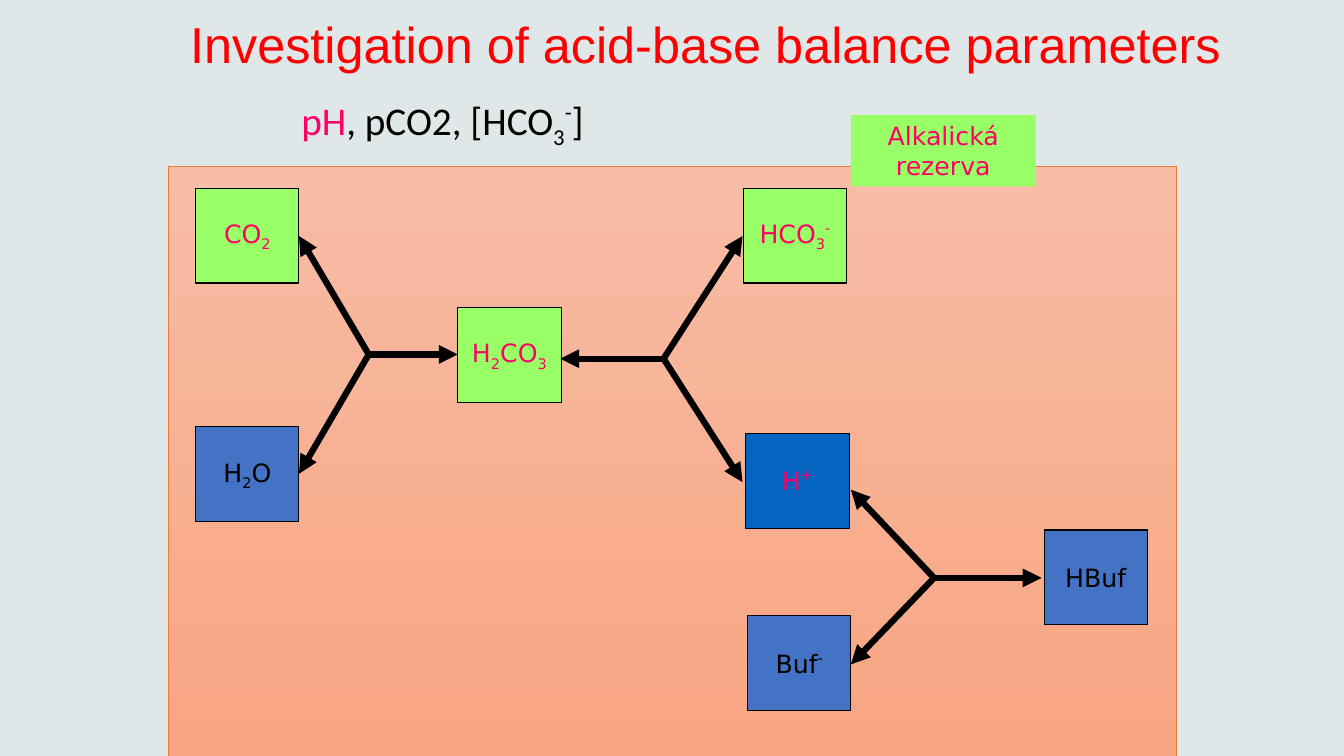
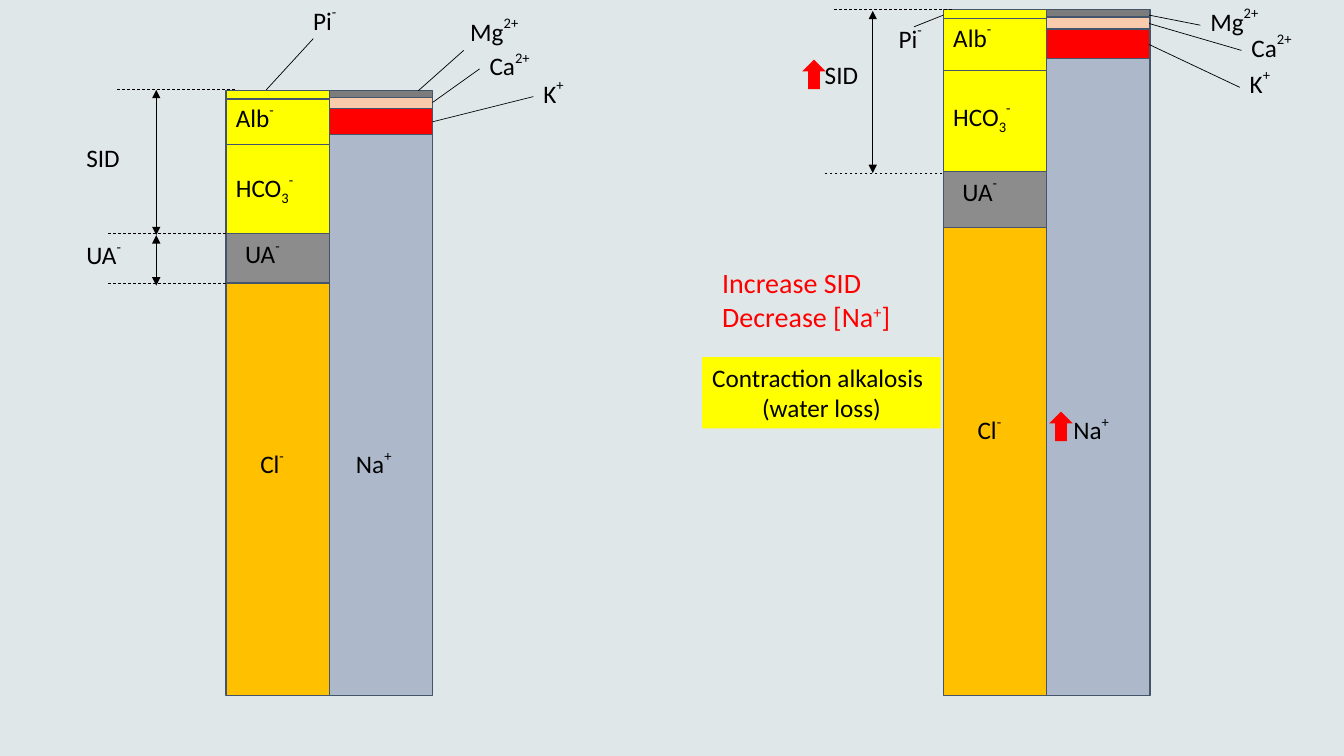
"""Build two slides on acid-base balance: buffer reactions and ion columns."""
from dataclasses import dataclass
from itertools import pairwise

from lxml.etree import SubElement
from pptx import Presentation
from pptx.dml.color import RGBColor
from pptx.enum.dml import MSO_LINE
from pptx.enum.shapes import MSO_CONNECTOR, MSO_SHAPE
from pptx.enum.text import MSO_ANCHOR, PP_ALIGN
from pptx.oxml.ns import qn
from pptx.util import Emu, Inches, Pt

COLUMNS, ROWS = 160, 90
CELL = Inches(7.5) / ROWS


@dataclass(frozen=True)
class Theme:
    backdrop: str = "E0E7E8"
    ink: str = "000000"
    pink: str = "FF0066"
    red: str = "FF0000"
    green: str = "99FF66"
    blue: str = "4472C4"
    deep_blue: str = "0563C1"
    yellow: str = "FFFF00"
    amber: str = "FFC000"
    grey: str = "8C8C8C"
    dark_grey: str = "7C7C7C"
    peach: str = "F8CBAD"
    slate: str = "ADB9CA"
    outline: str = "44546A"
    panel_top: str = "F7BDA5"
    panel_bottom: str = "F8A582"
    panel_edge: str = "ED7D31"
    title_font: str = "Arial"
    body_font: str = "Calibri"
    diagram_font: str = "DejaVu Sans"
    title_size: int = 36
    body_size: int = 28
    note_size: int = 20
    label_size: int = 18


THEME = Theme()
NODE_SIZE = (12.3, 11.3)
BAR_WIDTH = 12.3
COLUMN_HEIGHT = 72
LABELS = {
    "Pi": ("Pi|^-", 6.7), "Alb": ("Alb|^-", 9.4), "HCO3": ("HCO|_3|^-", 13.2),
    "UA": ("UA|^-", 9.1), "Cl": ("Cl|^-", 7.1), "Na": ("Na|^+", 8.6),
    "Mg": ("Mg|^2+", 10.9), "Ca": ("Ca|^2+", 9.7), "K": ("K|^+", 6.8),
    "SID": ("SID", 9),
}
CATIONS = (
    (0, THEME.dark_grey, None), (0.8, THEME.peach, None),
    (2.1, THEME.red, None), (5.2, THEME.slate, ("Na", 2, 36.6)),
)
ANIONS = (
    (0, THEME.yellow, None), (1, THEME.yellow, ("Alb", 0, -0.4)),
    (6.4, THEME.yellow, ("HCO3", 0, 2.5)), (17, THEME.grey, ("UA", 1.1, -0.2)),
    (22.9, THEME.amber, ("Cl", 2.9, 18.9)),
)


def grid(*lengths):
    return [Emu(round(length * CELL)) for length in lengths]


def rgb(code):
    return RGBColor.from_string(code)


class Painter:
    def __init__(self, theme):
        self.theme = theme
        self.deck = Presentation()
        self.deck.slide_width, self.deck.slide_height = grid(COLUMNS, ROWS)
        self.page = None

    def new_page(self):
        self.page = self.deck.slides.add_slide(self.deck.slide_layouts[6])
        self.page.background.fill.solid()
        self.page.background.fill.fore_color.rgb = rgb(self.theme.backdrop)

    def shape(self, place, fill, edge=None, weight=0.75, kind=MSO_SHAPE.RECTANGLE):
        box = self.page.shapes.add_shape(kind, *grid(*place))
        box.shadow.inherit = False
        box.fill.solid()
        box.fill.fore_color.rgb = rgb(fill)
        if edge:
            box.line.color.rgb = rgb(edge)
            box.line.width = Pt(weight)
        else:
            box.line.fill.background()
        return box

    def panel(self, place):
        box = self.shape(place, self.theme.panel_top, self.theme.panel_edge, 0.5)
        box.fill.gradient()
        box.fill.gradient_angle = 270
        ends = (self.theme.panel_top, self.theme.panel_bottom)
        for stop, color in zip(box.fill.gradient_stops, ends):
            stop.color.rgb = rgb(color)

    def put_text(self, box, lines, color=None, font=None, size=None, raised=50,
                 aligns=(PP_ALIGN.LEFT,), anchor=MSO_ANCHOR.TOP, spacing=None):
        frame = box.text_frame
        frame.word_wrap = True
        frame.vertical_anchor = anchor
        for index, line in enumerate(lines):
            para = frame.add_paragraph() if index else frame.paragraphs[0]
            para.alignment = aligns[index % len(aligns)]
            para.line_spacing = spacing
            para.font.name = font or self.theme.body_font
            para.font.size = Pt(size or self.theme.label_size)
            para.font.color.rgb = rgb(color or self.theme.ink)
            for part in line.split("|"):
                self.span(para, part, raised)

    def span(self, para, part, raised):
        span = para.add_run()
        span.text = part.lstrip("_^*")
        shift = {"_": -25, "^": raised}.get(part[0])
        if shift:
            span._r.get_or_add_rPr().set("baseline", str(shift * 1000))
        if part[0] == "*":
            span.font.color.rgb = rgb(self.theme.pink)

    def text(self, place, lines, **style):
        box = self.page.shapes.add_textbox(*grid(*place))
        self.put_text(box, lines, **style)

    def label(self, name, left, top):
        words, width = LABELS[name]
        self.text((left, top, width, 6), [words])

    def node(self, left, top, words, fill, color):
        box = self.shape((left, top, *NODE_SIZE), fill, self.theme.ink)
        self.put_text(box, [words], color, self.theme.diagram_font, raised=40,
                      aligns=(PP_ALIGN.CENTER,), anchor=MSO_ANCHOR.MIDDLE)

    def line(self, start, end, weight=0.5, ends=(), dashed=False):
        link = self.page.shapes.add_connector(
            MSO_CONNECTOR.STRAIGHT, *grid(*start, *end))
        link.line.color.rgb = rgb(self.theme.ink)
        link.line.width = Pt(weight)
        if dashed:
            link.line.dash_style = MSO_LINE.DASH
        properties = link._element.spPr
        for name in ends:
            SubElement(properties.find(qn("a:ln")), qn(f"a:{name}"), type="triangle")
        SubElement(properties, qn("a:effectLst"))

    def fork(self, hub, *targets):
        for target in targets:
            self.line(hub, target, 4.5, ("tailEnd",))

    def level(self, right, top):
        self.line((right, top), (right - 14.2, top), dashed=True)

    def measure(self, left, top, bottom):
        self.line((left, top), (left, bottom), ends=("headEnd", "tailEnd"))

    def callout(self, name, spot, start, end):
        self.label(name, *spot)
        self.line(start, end)

    def rise(self, left, top):
        self.shape((left, top, 2.8, 3.5), self.theme.red, kind=MSO_SHAPE.UP_ARROW)

    def ion_columns(self, left, top, height):
        scale = height / COLUMN_HEIGHT
        for x, ions in ((left + BAR_WIDTH, CATIONS), (left, ANIONS)):
            for ion, following in pairwise((*ions, (COLUMN_HEIGHT,))):
                start, fill, tag = ion
                depth = (following[0] - start) * scale
                self.shape((x, top + start * scale, BAR_WIDTH, depth),
                           fill, self.theme.outline, 1)
                if tag:
                    name, across, down = tag
                    self.label(name, x + across, top + (start + down) * scale)


def draw_reactions(painter):
    theme = painter.theme
    painter.new_page()
    painter.panel((20, 19.8, 120, 70.2))
    painter.text((34.7, 11, 108, 8.5), ["*pH|, pCO2, [HCO|_3|^-|]"],
                 size=theme.body_size, raised=40, spacing=0.9)
    for left, top, words, fill, color in (
        (88.5, 22.4, "HCO|_3|^-", theme.green, theme.pink),
        (88.8, 51.6, "H|^+", theme.deep_blue, theme.pink),
        (89, 73.3, "Buf|^-", theme.blue, theme.ink),
        (124.3, 63.1, "HBuf", theme.blue, theme.ink),
        (23.3, 22.4, "CO|_2", theme.green, theme.pink),
        (23.3, 50.8, "H|_2|O", theme.blue, theme.ink),
        (54.5, 36.6, "H|_2|CO|_3", theme.green, theme.pink),
    ):
        painter.node(left, top, words, fill, color)
    painter.fork((79, 42.7), (88.4, 57.4), (88.4, 28.1), (66.7, 42.7))
    painter.fork((43.9, 42.2), (35.6, 56.4), (35.6, 28.1), (54.5, 42.2))
    painter.fork((111.2, 68.8), (101.3, 79.1), (101.3, 58.3), (124, 68.8))
    painter.text((20, -1.9, 128, 15), ["Investigation of acid-base balance parameters"],
                 color=theme.red, font=theme.title_font, size=theme.title_size,
                 aligns=(PP_ALIGN.CENTER,), anchor=MSO_ANCHOR.MIDDLE, spacing=0.9)
    reserve = painter.shape((101.3, 13.7, 22, 8.5), theme.green)
    painter.put_text(reserve, ["Alkalická rezerva"], theme.pink, theme.diagram_font,
                     aligns=(PP_ALIGN.CENTER,))


def draw_ion_columns(painter):
    theme = painter.theme
    painter.new_page()
    painter.ion_columns(26.9, 10.8, 72)
    painter.ion_columns(112.3, 1.1, 81.7)
    for name, spot, start, end in (
        ("Pi", (36.1, -0.2), (37.3, 4.6), (31.7, 10.7)),
        ("Mg", (54.8, 1.1), (55.2, 6), (49.8, 10.8)),
        ("Ca", (57.1, 5.2), (57.1, 8.2), (51.5, 12.2)),
        ("K", (63.5, 8.5), (63.5, 11.5), (51.5, 14.5)),
        ("Pi", (105.8, 1.9), (108.8, 3.2), (112.3, 1.8)),
        ("Mg", (142.9, -0.1), (142.9, 3), (136.8, 1.8)),
        ("Ca", (147.8, 3), (147.8, 6), (136.8, 2.8)),
        ("K", (147.6, 7.3), (147.6, 10.4), (136.8, 5.3)),
    ):
        painter.callout(name, spot, start, end)
    for right, top in ((28, 10.7), (26.9, 27.8), (26.9, 33.7),
                       (113.3, 1.1), (112.2, 20.6)):
        painter.level(right, top)
    for left, top, bottom in ((18.6, 10.7, 28), (18.6, 28, 34), (103.9, 1.3, 20.6)):
        painter.measure(left, top, bottom)
    for name, left, top in (("SID", 9.1, 16.3), ("UA", 9.1, 27.7), ("SID", 97, 6.5)):
        painter.label(name, left, top)
    painter.rise(95.5, 7.1)
    painter.rise(124.9, 49)
    painter.text((84.8, 31, 22.8, 9.2), ["Increase SID", "Decrease [Na|^+|]"],
                 color=theme.red, size=theme.note_size, raised=30)
    verdict = painter.shape((83.6, 42.5, 28.4, 8.5), theme.yellow)
    painter.put_text(verdict, ["Contraction alkalosis", "(water loss)"],
                     aligns=(PP_ALIGN.LEFT, PP_ALIGN.CENTER))


def main():
    painter = Painter(THEME)
    draw_reactions(painter)
    draw_ion_columns(painter)
    painter.deck.save("out.pptx")


if __name__ == "__main__":
    main()
